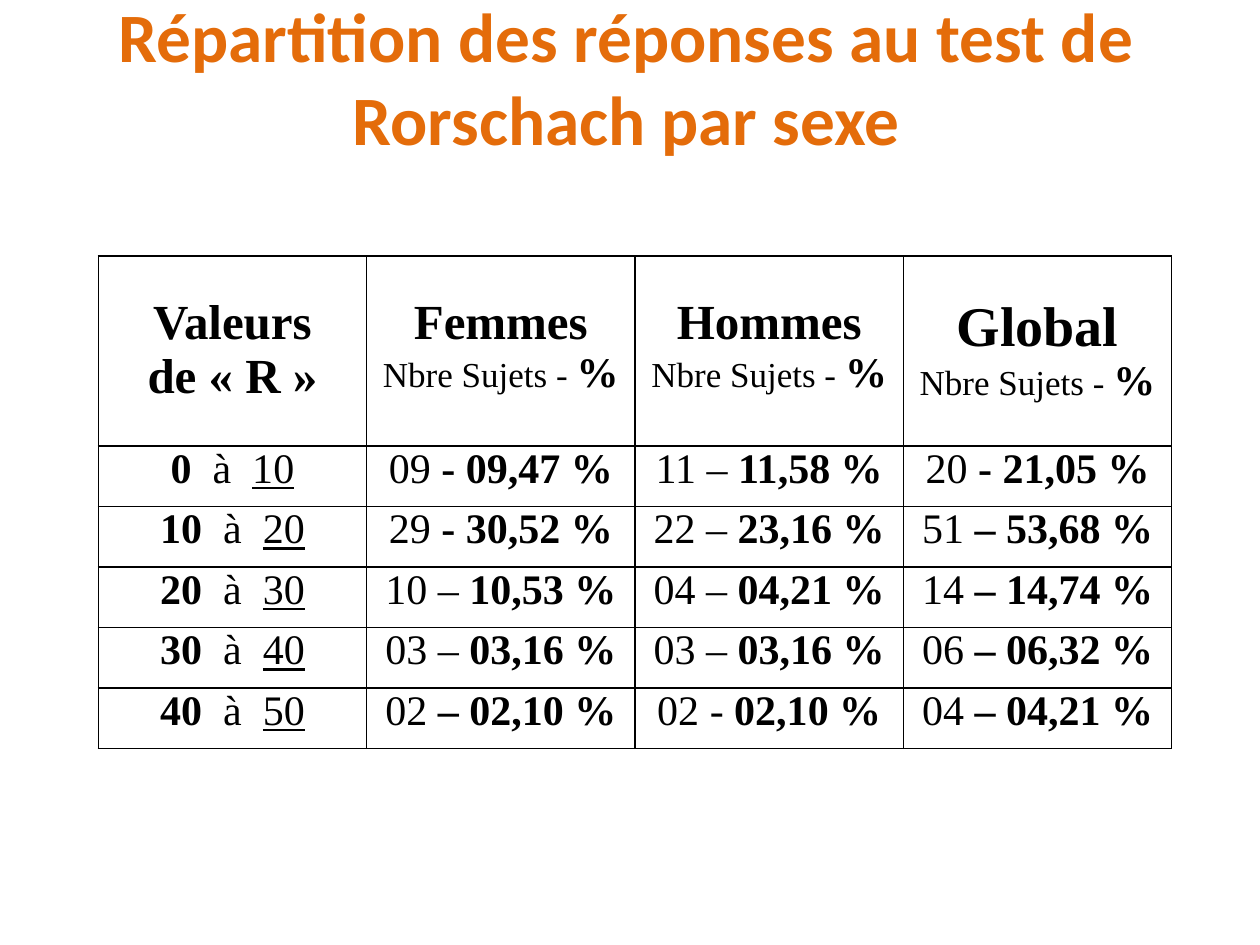
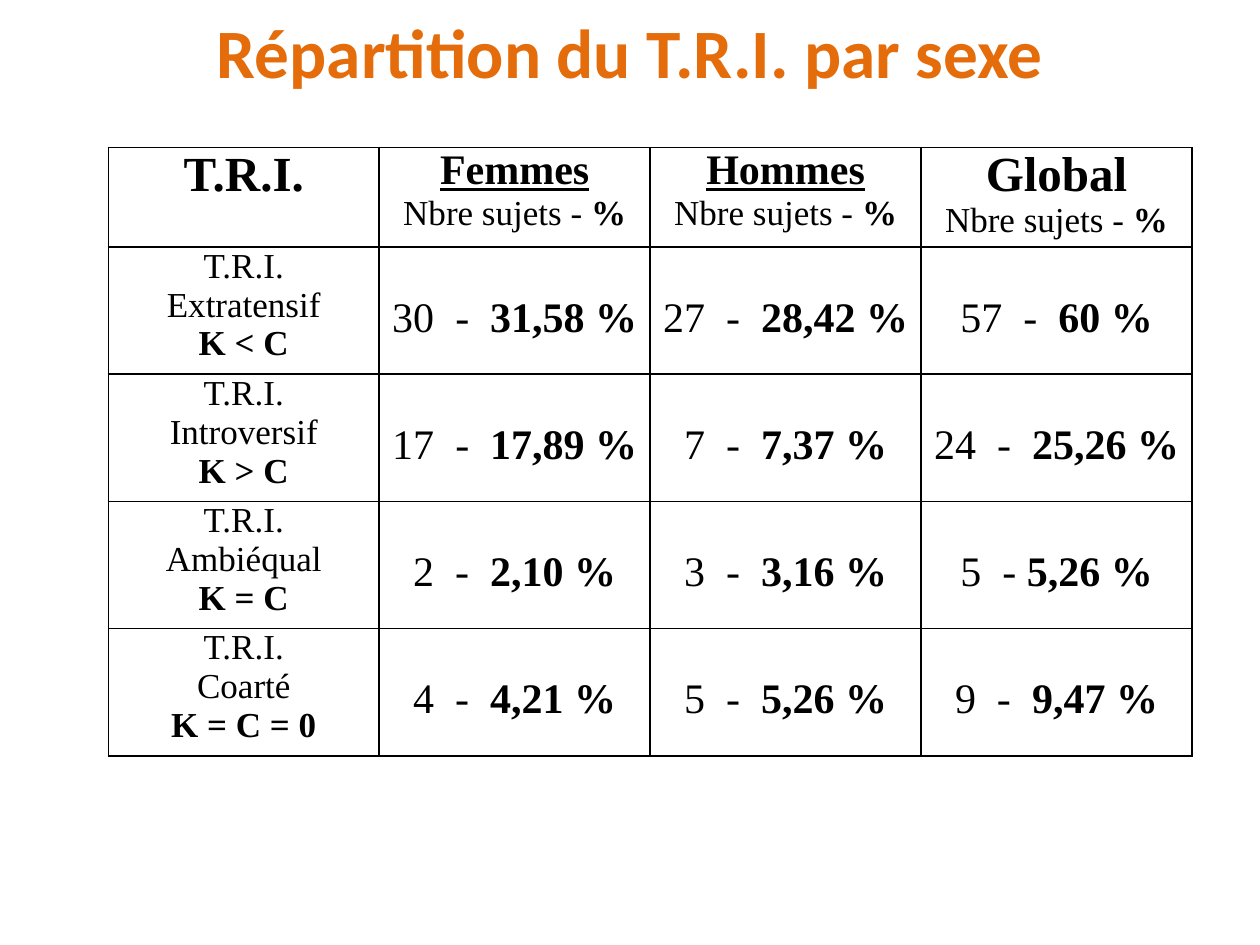
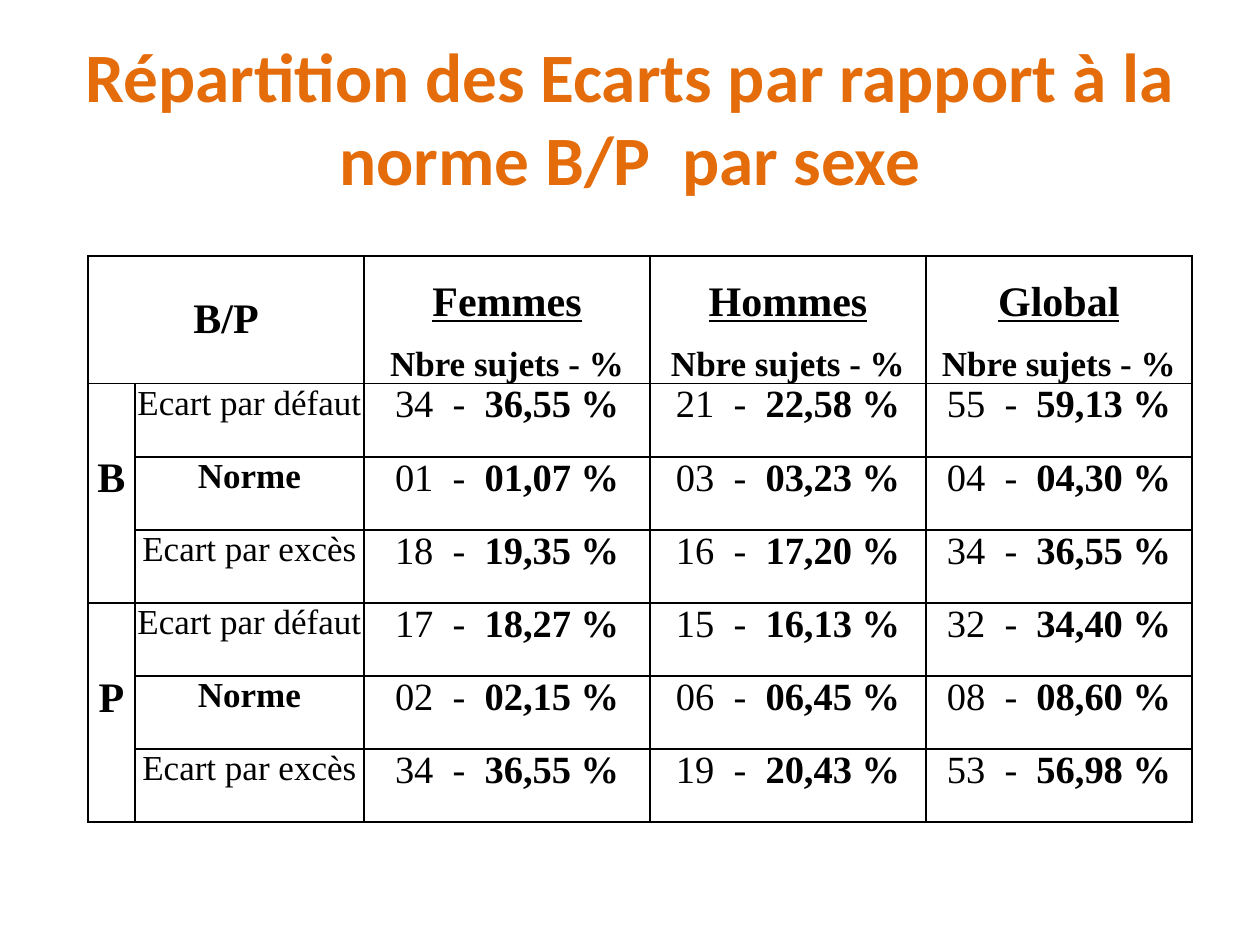
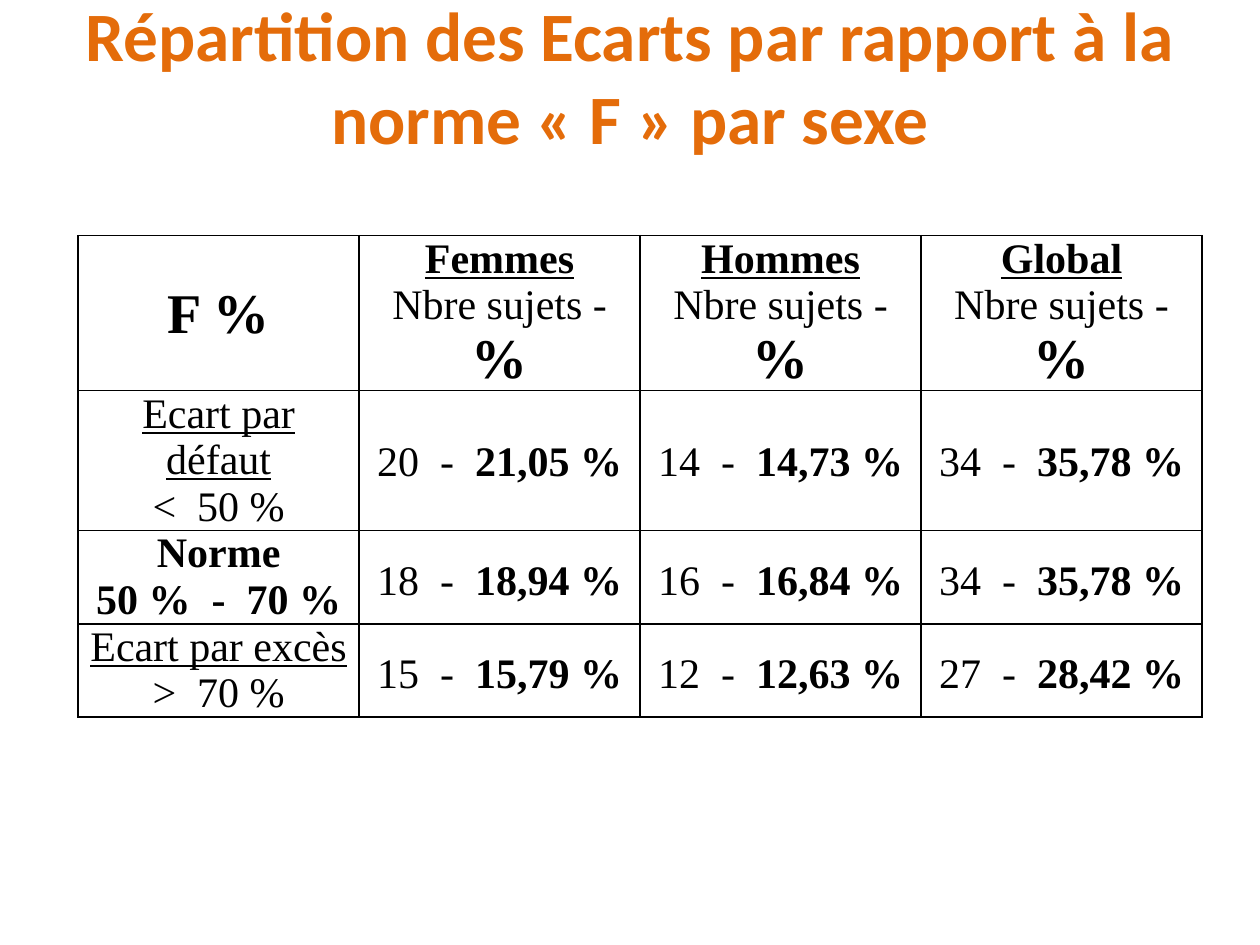
import pptx
import pptx.dml.color
import pptx.enum.text
import pptx.oxml
import pptx.oxml.ns
import pptx.util
from pptx.util import Inches

ORANGE = "E46C0A"
BLACK = "000000"
TITLE_FONT = "Calibri"
TABLE_FONT = "Times New Roman"
GROUPS = ["Femmes", "Hommes", "Global"]


def rgb(color):
    return pptx.dml.color.RGBColor.from_string(color)


def plain(text, size):
    return text, size, False, False


def bold(text, size):
    return text, size, True, False


def underlined(text, size, strong=False):
    return text, size, strong, True


def count_and_share(text, size):
    count, share = text.split("|")
    return [plain(count, size), bold(share, size)]


class Deck:
    def __init__(self):
        self.prs = pptx.Presentation()
        self.prs.slide_width = Inches(10)
        self.prs.slide_height = Inches(7.5)
        self.slide = None

    def add_run(self, p, text, size, strong, underline, font, color):
        r = p.add_run()
        r.text = text
        r.font.name = font
        r.font.size = pptx.util.Pt(size)
        r.font.bold = strong
        r.font.underline = underline
        r.font.color.rgb = rgb(color)

    def add_slide(self, title, left=0.5, top=0.3, height=1.25, bottom_inset=0.71):
        self.slide = self.prs.slides.add_slide(self.prs.slide_layouts[5])
        sp = self.slide.shapes.title
        sp.left, sp.top = Inches(left), Inches(top)
        sp.width, sp.height = Inches(9), Inches(height)
        tf = sp.text_frame
        tf.word_wrap = True
        tf.auto_size = pptx.enum.text.MSO_AUTO_SIZE.NONE
        tf.vertical_anchor = pptx.enum.text.MSO_ANCHOR.MIDDLE
        tf.margin_bottom = Inches(bottom_inset)
        p = tf.paragraphs[0]
        p.alignment = pptx.enum.text.PP_ALIGN.CENTER
        self.add_run(p, title, 39.6, True, False, TITLE_FONT, ORANGE)

    def add_table(self, left, top, cols, rows, inset=0.07, thick_after=None):
        frame = self.slide.shapes.add_table(
            len(rows), len(cols), Inches(left), Inches(top),
            Inches(sum(cols)), Inches(sum(rows)))
        table = frame.table
        table.first_row = False
        table.horz_banding = False
        for column, width in zip(table.columns, cols):
            column.width = Inches(width)
        for i, (row, height) in enumerate(zip(table.rows, rows)):
            row.height = Inches(height)
            for cell in row.cells:
                cell.margin_left = cell.margin_right = Inches(inset)
                cell.margin_top = cell.margin_bottom = 0
                top_width = 1.5 if i - 1 == thick_after else 1
                bottom_width = 1.5 if i == thick_after else 1
                self.set_borders(cell, L=1, R=1, T=top_width, B=bottom_width)
                cell.fill.background()
        return table

    def set_borders(self, cell, **widths):
        tc_pr = cell._tc.get_or_add_tcPr()
        for side, width in widths.items():
            tc_pr.append(pptx.oxml.parse_xml(
                f'<a:ln{side} {pptx.oxml.ns.nsdecls("a")} w="{pptx.util.Pt(width)}">'
                f'<a:solidFill><a:srgbClr val="{BLACK}"/></a:solidFill></a:ln{side}>'))

    def fill_cell(self, cell, paragraphs, top=0, spacing=None):
        cell.margin_top = Inches(top)
        tf = cell.text_frame
        for i, runs in enumerate(paragraphs):
            p = tf.add_paragraph() if i else tf.paragraphs[0]
            p.alignment = pptx.enum.text.PP_ALIGN.CENTER
            if spacing:
                p.line_spacing = spacing
            for run in runs:
                self.add_run(p, *run, TABLE_FONT, BLACK)

    def fill_values(self, table, rows, size, first_col=1, tops=None):
        for i, values in enumerate(rows):
            for j, value in enumerate(values):
                self.fill_cell(table.cell(i + 1, j + first_col),
                               [count_and_share(value, size)],
                               top=tops[i] if tops else 0)


def responses_slide(deck):
    deck.add_slide("Répartition des réponses au test de Rorschach par sexe",
                   left=0.47, top=0.31)
    table = deck.add_table(0.78, 2.03, [2.13] * 4, [1.51] + [0.48] * 5)
    deck.fill_cell(table.cell(0, 0),
                   [[bold("Valeurs", 28)], [bold("de «\u00a0R\u00a0»", 28)]], top=0.32)
    for j, (group, size) in enumerate(zip(GROUPS, [28, 28, 32])):
        deck.fill_cell(table.cell(0, j + 1),
                       [[bold(group, size)],
                        [plain("Nbre Sujets - ", 20), bold("%", 24)]], top=0.32)
    for i in range(5):
        deck.fill_cell(table.cell(i + 1, 0),
                       [[bold(str(10 * i), 24), plain("  à  ", 24),
                         underlined(str(10 * i + 10), 24)]])
    deck.fill_values(table, [
        ["09| - 09,47 %", "11 – |11,58 %", "20| - 21,05 %"],
        ["29| - 30,52 %", "22 – |23,16 %", "51| – 53,68 %"],
        ["10 – |10,53 %", "04 – |04,21 %", "14| – 14,74 %"],
        ["03 – |03,16 %", "03 – |03,16 %", "06| – 06,32 %"],
        ["02| – 02,10 %", "02 - |02,10 %", "04| – 04,21 %"],
    ], 24)


def tri_slide(deck):
    deck.add_slide("Répartition du T.R.I. par sexe", height=0.87)
    table = deck.add_table(0.86, 1.17, [2.15] * 4, [0.79] + [1.01] * 4)
    deck.fill_cell(table.cell(0, 0), [[bold("T.R.I.", 28)]])
    headings = [underlined("Femmes", 24, True), underlined("Hommes", 24, True),
                bold("Global", 28)]
    for j, heading in enumerate(headings):
        deck.fill_cell(table.cell(0, j + 1),
                       [[heading], [plain("Nbre sujets - ", 20), bold("%", 20)]])
    types = [("Extratensif", "K < C"), ("Introversif", "K > C"),
             ("Ambiéqual", "K = C"), ("Coarté", "K = C = 0")]
    for i, (name, formula) in enumerate(types):
        deck.fill_cell(table.cell(i + 1, 0),
                       [[plain("T.R.I.", 20)], [plain(name, 20)], [bold(formula, 20)]])
    deck.fill_values(table, [
        ["30  -  |31,58 %", "27  -  |28,42 %", "57  -  |60 %"],
        ["17  -  |17,89 %", "7  -  |7,37 %", "24  -  |25,26 %"],
        ["2  -  |2,10 %", "3  -  |3,16 %", "5  - |5,26 %"],
        ["4  -  |4,21 %", "5  -  |5,26 %", "9  -  |9,47 %"],
    ], 24, tops=[0.38] * 4)


def bp_slide(deck):
    deck.add_slide("Répartition des Ecarts par rapport à la norme B/P  par sexe",
                   bottom_inset=0.05)
    table = deck.add_table(0.7, 2.03, [0.37, 1.82, 2.27, 2.19, 2.11],
                           [0.99] + [0.58] * 6, inset=0.02, thick_after=3)
    table.cell(0, 0).merge(table.cell(0, 1))
    deck.fill_cell(table.cell(0, 0), [[bold("B/P", 24)]], top=0.32)
    for j, group in enumerate(GROUPS):
        deck.fill_cell(table.cell(0, j + 2),
                       [[underlined(group, 24, True)], [bold("Nbre sujets - %", 20)]],
                       spacing=1.5)
    labels = [plain("Ecart par défaut", 20), bold("Norme", 20),
              plain("Ecart par excès", 20)]
    for letter, first in [("B", 1), ("P", 4)]:
        table.cell(first, 0).merge(table.cell(first + 2, 0))
        deck.fill_cell(table.cell(first, 0), [[bold(letter, 24)]], top=0.57)
        for i, label in enumerate(labels):
            deck.fill_cell(table.cell(first + i, 1), [[label]])
    deck.fill_values(table, [
        ["34  -  |36,55 %", "21  -  |22,58 %", "55  -  |59,13 %"],
        ["01  -  |01,07 %", "03  -  |03,23 %", "04  -  |04,30 %"],
        ["18  -  |19,35 %", "16  -  |17,20 %", "34  -  |36,55 %"],
        ["17  -  |18,27 %", "15  -  |16,13 %", "32  -  |34,40 %"],
        ["02  -  |02,15 %", "06  -  |06,45 %", "08  -  |08,60 %"],
        ["34  -  |36,55 %", "19  -  |20,43 %", "53  -  |56,98 %"],
    ], 22, first_col=2)


def f_slide(deck):
    deck.add_slide("Répartition des Ecarts par rapport à la norme «\u00a0F\u00a0» par sexe")
    table = deck.add_table(0.62, 1.87, [2.23] * 4, [1.23, 1.11, 0.74, 0.74])
    deck.fill_cell(table.cell(0, 0), [[bold("F %", 32)]], top=0.38)
    for j, group in enumerate(GROUPS):
        deck.fill_cell(table.cell(0, j + 1),
                       [[underlined(group, 24, True)],
                        [plain("Nbre sujets - ", 24), bold("%", 32)]])
    labels = [
        [[underlined("Ecart par défaut", 24)], [plain("<  50 %", 24)]],
        [[bold("Norme", 24)], [bold("50 %  -  70 %", 24)]],
        [[underlined("Ecart par excès", 24)], [plain(">  70 %", 24)]],
    ]
    for i, label in enumerate(labels):
        deck.fill_cell(table.cell(i + 1, 0), label)
    deck.fill_values(table, [
        ["20  -  |21,05 %", "14  -  |14,73 %", "34  -  |35,78 %"],
        ["18  -  |18,94 %", "16  -  |16,84 %", "34  -  |35,78 %"],
        ["15  -  |15,79 %", "12  -  |12,63 %", "27  -  |28,42 %"],
    ], 24, tops=[0.38, 0.22, 0.22])


def main():
    deck = Deck()
    responses_slide(deck)
    tri_slide(deck)
    bp_slide(deck)
    f_slide(deck)
    deck.prs.save("out.pptx")


if __name__ == "__main__":
    main()
